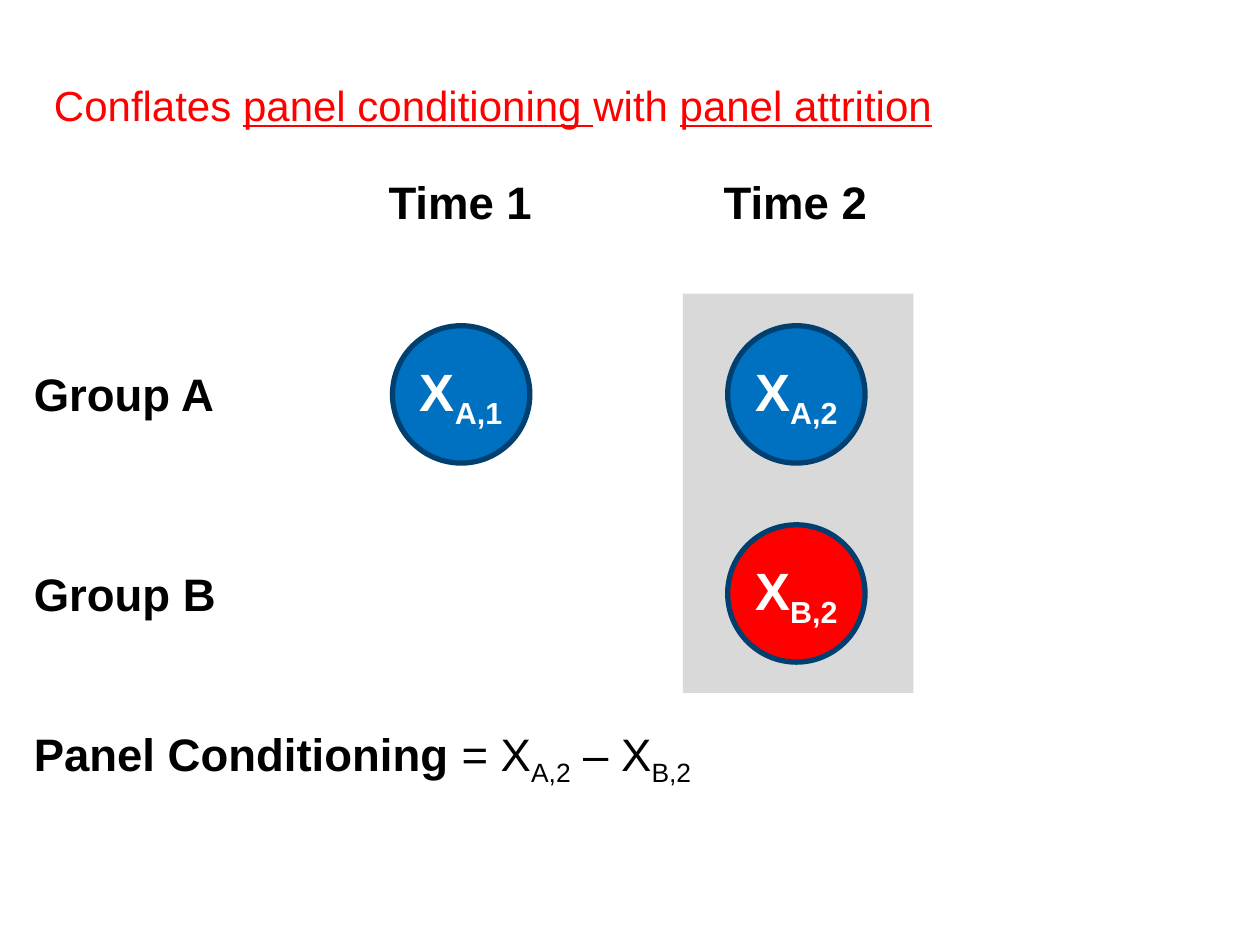
from pptx import Presentation
from pptx.dml.color import RGBColor
from pptx.enum.shapes import MSO_SHAPE as Shape
from pptx.enum.text import MSO_ANCHOR as Anchor, MSO_AUTO_SIZE as AutoSize, PP_ALIGN as Align
from pptx.util import Inches, Pt

# Runs are (text, format); "sub" marks a subscript.
SUB, UNDERLINE, REGULAR = {"sub": True}, {"underline": True}, {"bold": False}
HEADLINE = [("Conflates ", {}), ("panel conditioning ", UNDERLINE),
            ("with ", {}), ("panel attrition", UNDERLINE)]
FORMULA = [("Panel Conditioning ", {}), ("= X", REGULAR), ("A,2", REGULAR | SUB),
           (" – X", REGULAR), ("B,2", REGULAR | SUB)]
TIMES = ["Time 1", "Time 2"]
GROUPS = [("Group A", 1.65), ("Group B", 1.66)]  # label, width
MEASURES = [("A,1", 0, 0, "0070C0"), ("A,2", 1, 0, "0070C0"), ("B,2", 1, 1, "FF0000")]

# Inches
COLUMN_X, COLUMN_STEP = 3.66, 2.66
ROW_Y, ROW_STEP = 3.13, 1.58
CIRCLE, LABEL_HEIGHT, TIME_WIDTH = 1.09, 0.54, 1.35
LEFT = 0.17
LABEL_FORMAT = {"size": Pt(26), "bold": True}


def rgb(hex_colour):
    return RGBColor.from_string(hex_colour)


def column_centre(column):
    return COLUMN_X + column * COLUMN_STEP


def row_centre(row):
    return ROW_Y + row * ROW_STEP


def write(frame, runs, colour, base):
    """Fill the first paragraph with runs that share a base format."""
    paragraph = frame.paragraphs[0]
    for text, extra in runs:
        run = paragraph.add_run()
        run.text = text
        run.font.color.rgb = rgb(colour)
        for key, value in ({"name": "Arial"} | base | extra).items():
            if key == "sub":
                run.font._element.set("baseline", "-25000")
            else:
                setattr(run.font, key, value)
    return paragraph


def add_label(slide, box, runs, colour="000000", base=LABEL_FORMAT, wrap=False):
    frame = slide.shapes.add_textbox(*map(Inches, box)).text_frame
    frame.word_wrap = wrap
    frame.auto_size = AutoSize.SHAPE_TO_FIT_TEXT
    write(frame, runs, colour, base)


def add_filled(slide, preset, box, fill):
    shape = slide.shapes.add_shape(preset, *map(Inches, box))
    shape.shadow.inherit = False
    shape.fill.solid()
    shape.fill.fore_color.rgb = rgb(fill)
    shape.line.fill.background()
    return shape


def add_measure(slide, subscript, column, row, fill):
    box = (column_centre(column) - CIRCLE / 2, row_centre(row) - CIRCLE / 2, CIRCLE, CIRCLE)
    circle = add_filled(slide, Shape.OVAL, box, fill)
    circle.line.color.rgb = rgb("004070")
    circle.line.width = Pt(3)
    frame = circle.text_frame
    for side in ("left", "top", "right", "bottom"):
        setattr(frame, f"margin_{side}", 0)
    frame.vertical_anchor = Anchor.MIDDLE
    paragraph = write(frame, [("X", {}), (subscript, SUB)], "FFFFFF",
                      {"size": Pt(30), "bold": True})
    paragraph.alignment = Align.CENTER


def main():
    deck = Presentation()
    deck.slide_width, deck.slide_height = Inches(10), Inches(7.5)
    slide = deck.slides.add_slide(deck.slide_layouts[6])

    add_filled(slide, Shape.RECTANGLE, (5.42, 2.33, 1.83, 3.17), "D9D9D9")
    for column, time in enumerate(TIMES):
        left = column_centre(column) - TIME_WIDTH / 2
        add_label(slide, (left, 1.33, TIME_WIDTH, LABEL_HEIGHT), [(time, {})])
    for row, (group, width) in enumerate(GROUPS):
        top = row_centre(row) - LABEL_HEIGHT / 2
        add_label(slide, (LEFT, top, width, LABEL_HEIGHT), [(group, {})])
    for measure in MEASURES:
        add_measure(slide, *measure)
    add_label(slide, (LEFT, 5.71, 5.56, LABEL_HEIGHT), FORMULA)
    add_label(slide, (0.33, 0.58, 9.08, 0.5), HEADLINE, "FF0000", {"size": Pt(24)}, wrap=True)

    deck.save("out.pptx")


if __name__ == "__main__":
    main()
